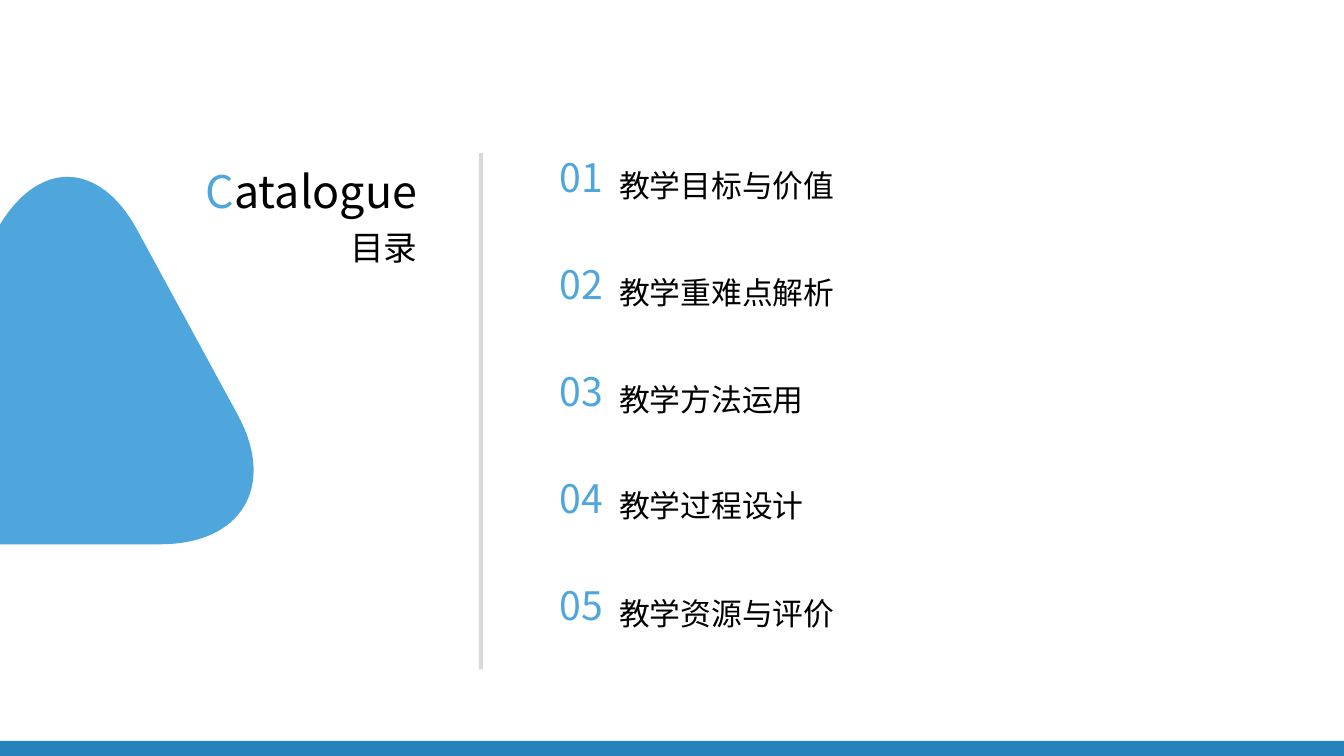
from lxml import etree
from pptx import Presentation
from pptx.dml.color import RGBColor
from pptx.enum.shapes import MSO_SHAPE
from pptx.enum.text import MSO_ANCHOR, MSO_AUTO_SIZE, PP_ALIGN
from pptx.oxml.ns import qn
from pptx.util import Pt

RECT = MSO_SHAPE.RECTANGLE
TOP, MIDDLE = MSO_ANCHOR.TOP, MSO_ANCHOR.MIDDLE
LEFT, RIGHT = PP_ALIGN.LEFT, PP_ALIGN.RIGHT
NO_FIT = MSO_AUTO_SIZE.NONE

PX = 9144  # 100 px to the inch
WIDE, HIGH = 1333, 750
FONT = "Noto Sans CJK SC"
COLORS = {"sky": "4EA6DC", "sea": "2582BB", "gray": "D9D9D9", "ink": "000000"}
TOPICS = ["教学目标与价值", "教学重难点解析", "教学方法运用", "教学过程设计", "教学资源与评价"]


def color(name):
    return RGBColor.from_string(COLORS[name])


def paint(shape, name):
    shape.fill.solid()
    shape.fill.fore_color.rgb = color(name)
    shape.line.fill.background()
    shape.shadow.inherit = False


def block(slide, box, name):
    paint(slide.shapes.add_shape(RECT, *(n * PX for n in box)), name)


def style(run, size, name):
    run.font.name = FONT
    etree.SubElement(run._r.get_or_add_rPr(), qn("a:ea"), typeface=FONT)
    run.font.size = Pt(size)
    run.font.bold = False
    run.font.color.rgb = color(name)


def write(shape, parts, size, align=LEFT, anchor=MIDDLE, space=1.0):
    """Fill a text shape with (text, color) runs."""
    frame = shape.text_frame
    frame.word_wrap = True
    frame.auto_size = NO_FIT
    frame.vertical_anchor = anchor
    frame.margin_left = frame.margin_right = 0
    frame.margin_top = frame.margin_bottom = 0
    para = frame.paragraphs[0]
    para.alignment = align
    para.line_spacing = space
    for text, name in parts:
        run = para.add_run()
        run.text = text
        style(run, size, name)


def label(slide, box, text, size, name, **look):
    shape = slide.shapes.add_textbox(*(n * PX for n in box))
    write(shape, [(text, name)], size, **look)


def curve(a, b, c, d, steps=32):
    """Points along a cubic curve from a to d."""
    for i in range(steps + 1):
        t = i / steps
        u = 1 - t
        yield tuple(u**3 * p + 3 * u * u * t * q + 3 * u * t * t * r + t**3 * s
                    for p, q, r, s in zip(a, b, c, d))


def add_hill(slide, box):
    """Rounded triangle whose left part runs off the slide."""
    x, y, w, h = box
    corners = [
        [(277, 365), (358, 365), (392, 307), (354, 237)],
        [(254, 53), (216, -17), (154, -17), (115, 53)],
        [(16, 237), (-22, 308), (12, 365), (92, 365)],
    ]
    points = [(round((x + px * w / 369) * PX), round((y + py * h / 365) * PX))
              for corner in corners for px, py in curve(*corner)]
    pen = slide.shapes.build_freeform(*points[0], scale=1.0)
    pen.add_line_segments(points[1:], close=True)
    paint(pen.convert_to_shape(), "sky")


def add_head(slide, box):
    """Title and its translation, set flush right."""
    x, y, w, h = box
    title = slide.shapes.title
    title.left, title.top, title.width, title.height = (
        n * PX for n in (x, y, w, 47))
    write(title, [("C", "sky"), ("atalogue", "ink")], 32, align=RIGHT)
    label(slide, (x + w - 84, y + h - 34, 84, 34), "目录", 24, "ink", align=RIGHT)


def add_list(slide, box):
    """Numbered topics at an equal pitch."""
    x, y, w, h = box
    for i, topic in enumerate(TOPICS):
        top = y + i * (h - 85) // (len(TOPICS) - 1)
        label(slide, (x, top, 56, 47), f"{i + 1:02}", 28, "sky")
        label(slide, (x + 59, top + 6, w - 59, 79), topic, 22, "ink",
              anchor=TOP, space=1.2)


def main():
    deck = Presentation()
    deck.slide_width, deck.slide_height = WIDE * PX, HIGH * PX
    slide = deck.slides.add_slide(deck.slide_layouts[5])
    add_head(slide, (132, 166, 282, 96))
    add_hill(slide, (-118, 175, 369, 365))
    block(slide, (0, HIGH - 15, WIDE, 15), "sea")  # footer band
    block(slide, (475, 152, 4, 512), "gray")  # divider
    add_list(slide, (555, 152, 705, 510))
    deck.save("out.pptx")


if __name__ == "__main__":
    main()
